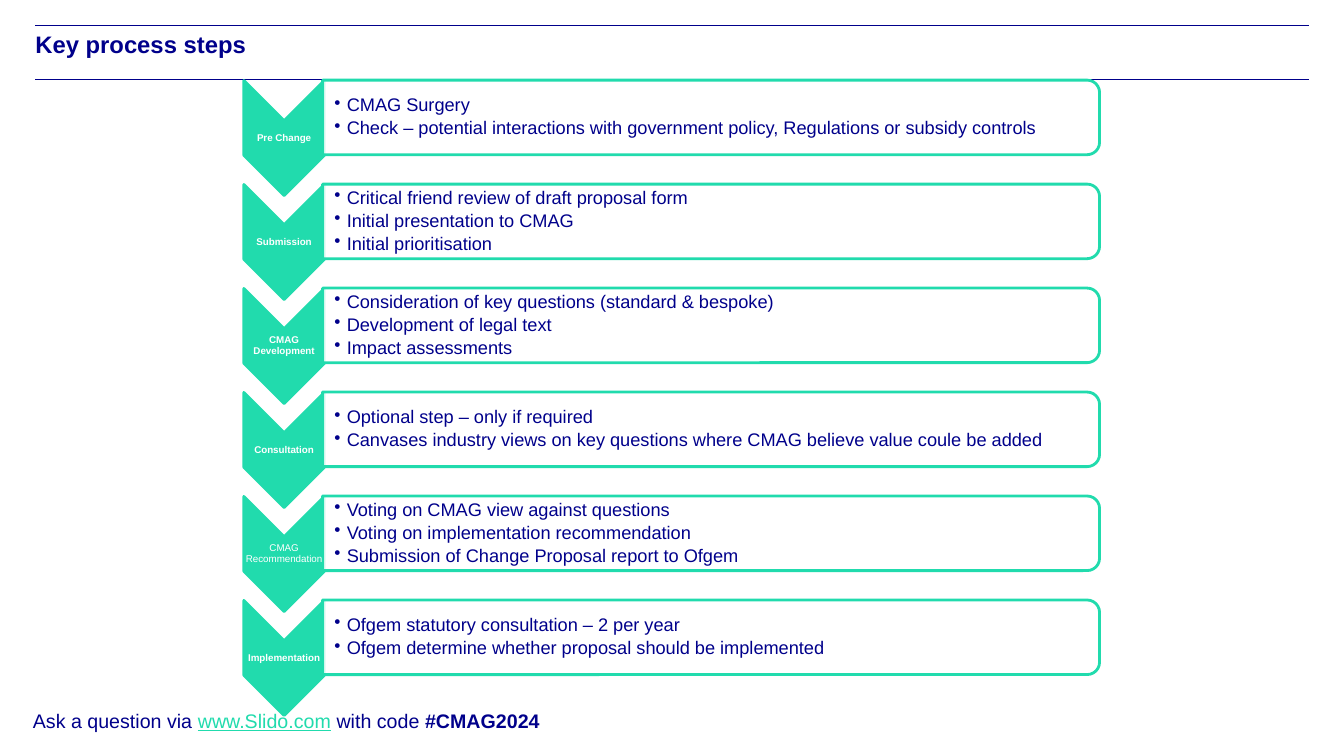
from dataclasses import dataclass

from lxml import etree
from pptx import Presentation
from pptx.dml.color import RGBColor
from pptx.enum.shapes import MSO_CONNECTOR, MSO_SHAPE
from pptx.enum.text import MSO_ANCHOR, MSO_AUTO_SIZE, PP_ALIGN
from pptx.oxml.ns import qn
from pptx.util import Cm, Pt

STRAIGHT = MSO_CONNECTOR.STRAIGHT
CHEVRON = MSO_SHAPE.CHEVRON
ROUNDED_END = MSO_SHAPE.ROUND_2_SAME_RECTANGLE
TOP, MIDDLE = MSO_ANCHOR.TOP, MSO_ANCHOR.MIDDLE
LEFT, CENTER = PP_ALIGN.LEFT, PP_ALIGN.CENTER
GROW = MSO_AUTO_SIZE.SHAPE_TO_FIT_TEXT
NO_FIT = MSO_AUTO_SIZE.NONE


@dataclass(frozen=True)
class Theme:
    font: str = "Arial"
    navy: RGBColor = RGBColor(0x00, 0x00, 0x8B)
    mint: RGBColor = RGBColor(0x21, 0xDB, 0xAD)
    white: RGBColor = RGBColor(0xFF, 0xFF, 0xFF)
    title: Pt = Pt(17)
    footer: Pt = Pt(14)
    step: Pt = Pt(13)
    label: Pt = Pt(7)


THEME = Theme()

STEPS = [
    ("Pre Change", True, [
        "CMAG Surgery",
        "Check – potential interactions with government policy, Regulations or subsidy controls",
    ]),
    ("Submission", True, [
        "Critical friend review of draft proposal form",
        "Initial presentation to CMAG",
        "Initial prioritisation",
    ]),
    ("CMAG Development", True, [
        "Consideration of key questions (standard & bespoke)",
        "Development of legal text",
        "Impact assessments",
    ]),
    ("Consultation", True, [
        "Optional step – only if required",
        "Canvases industry views on key questions where CMAG believe value coule be added",
    ]),
    ("CMAG Recommendation", False, [
        "Voting on CMAG view against questions",
        "Voting on implementation recommendation",
        "Submission of Change Proposal report to Ofgem",
    ]),
    ("Implementation", True, [
        "Ofgem statutory consultation – 2 per year",
        "Ofgem determine whether proposal should be implemented",
    ]),
]


def add_span(para, text, size, color, bold=False):
    span = para.add_run()
    span.text = text
    span.font.name = THEME.font
    span.font.size = size
    span.font.color.rgb = color
    span.font.bold = bold
    return span


def set_frame(box, anchor, left=0, edge=0):
    frame = box.text_frame
    frame.word_wrap = True
    frame.auto_size = NO_FIT
    frame.vertical_anchor = anchor
    frame.margin_left = Cm(left)
    frame.margin_top = frame.margin_right = frame.margin_bottom = Cm(edge)
    return frame


deck = Presentation()
deck.slide_width, deck.slide_height = Cm(33.87), Cm(19.05)
page = deck.slides.add_slide(deck.slide_layouts[5])

for rule_y in (0.64, 2.01):
    rule = page.shapes.add_connector(STRAIGHT, Cm(0.89), Cm(rule_y), Cm(33), Cm(rule_y))
    rule.line.color.rgb = THEME.navy
    rule.line.width = Pt(0.5)
    etree.SubElement(rule._element.spPr, qn("a:effectLst"))

footer = page.shapes.add_textbox(Cm(0.58), Cm(17.73), Cm(14.25), Cm(0.86))
footer.text_frame.word_wrap = True
footer.text_frame.auto_size = GROW
para = footer.text_frame.paragraphs[0]
add_span(para, "Ask a question via ", THEME.footer, THEME.navy)
add_span(para, "www.Slido.com", THEME.footer, THEME.mint).font.underline = True
add_span(para, " with code ", THEME.footer, THEME.navy)
add_span(para, "#CMAG2024", THEME.footer, THEME.navy, True)

title = page.shapes.title
title.left, title.top, title.width, title.height = Cm(0.89), Cm(0.76), Cm(32.11), Cm(1.24)
para = set_frame(title, TOP).paragraphs[0]
para.alignment = LEFT
add_span(para, "Key process steps", THEME.title, THEME.navy, True)

PITCH = 2.62
CHEVRON_X, CHEVRON_Y, CHEVRON_LONG, CHEVRON_WIDE = 7.16, 3.48, 2.9, 2.03
PANEL_X, PANEL_Y, PANEL_LONG, PANEL_WIDE = 17.92, 2.96, 19.58, 1.88
LABEL_HEIGHT = 0.86

for index, (name, bold, points) in enumerate(STEPS):
    chevron_y = CHEVRON_Y + index * PITCH
    panel_y = PANEL_Y + index * PITCH

    for kind, x, y, width, height, fill in (
        (CHEVRON, CHEVRON_X, chevron_y, CHEVRON_LONG, CHEVRON_WIDE, THEME.mint),
        (ROUNDED_END, PANEL_X, panel_y, PANEL_WIDE, PANEL_LONG, THEME.white),
    ):
        shape = page.shapes.add_shape(
            kind, Cm(x - width / 2), Cm(y - height / 2), Cm(width), Cm(height))
        shape.rotation = 90
        shape.shadow.inherit = False
        shape.fill.solid()
        shape.fill.fore_color.rgb = fill
        shape.line.color.rgb = THEME.mint
        shape.line.width = Pt(2)
    panel_color = shape._element.spPr.find(qn("a:solidFill"))[0]
    etree.SubElement(panel_color, qn("a:alpha"), val="90000")

    label = page.shapes.add_textbox(
        Cm(CHEVRON_X - CHEVRON_WIDE / 2), Cm(chevron_y - LABEL_HEIGHT / 2),
        Cm(CHEVRON_WIDE), Cm(LABEL_HEIGHT))
    para = set_frame(label, MIDDLE).paragraphs[0]
    para.alignment = CENTER
    para.line_spacing = 0.9
    add_span(para, name, THEME.label, THEME.white, bold)

    details = page.shapes.add_textbox(Cm(8.18), Cm(panel_y - 0.85), Cm(19.48), Cm(1.7))
    frame = set_frame(details, MIDDLE, 0.25, 0.02)
    for number, point in enumerate(points):
        para = frame.add_paragraph() if number else frame.paragraphs[0]
        para.level = 1
        para.line_spacing = 0.9
        para.space_after = Pt(2.4)
        properties = para._p.get_or_add_pPr()
        properties.set("marL", str(Cm(0.31)))
        properties.set("indent", str(Cm(-0.31)))
        etree.SubElement(properties, qn("a:buChar"), char="•")
        add_span(para, point, THEME.step, THEME.navy)

deck.save("out.pptx")
